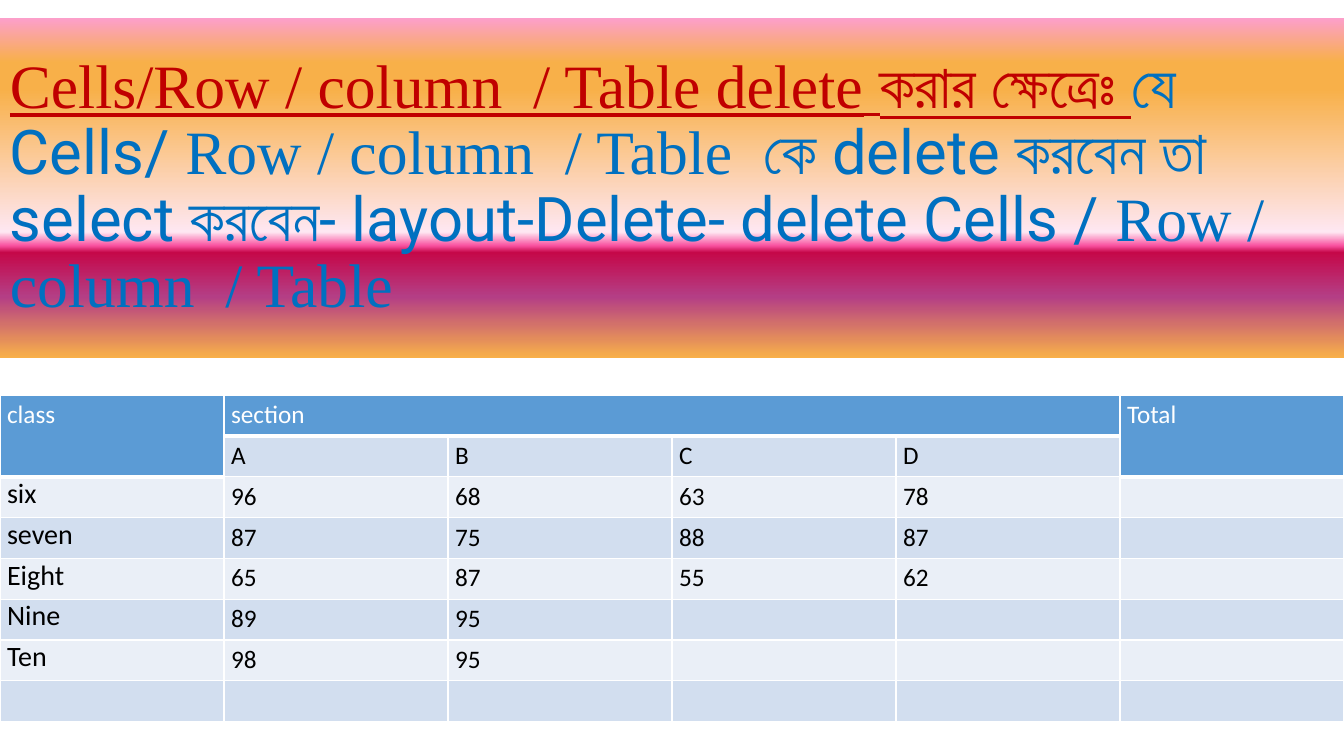
from lxml import etree
from pptx import Presentation
from pptx import util as u
from pptx.dml.color import RGBColor
from pptx.enum import shapes, text
from pptx.oxml import ns

COLORS = {
    "heading": "C00000", "body": "0070C0", "white": "FFFFFF", "black": "000000",
    "header": "5B9BD5", "band_dark": "D2DEEF", "band_light": "EAEFF7",
}
BANNER_STOPS = [
    (0, "FC9FCB"), (13, "F8B049"), (21, "F8B049"), (63, "FEE7F2"),
    (67, "F952A0"), (69, "C50849"), (82, "B43E85"), (100, "F8B049"),
]
TITLE_RUNS = [
    ("Cells/Row / column  / Table delete", "Times New Roman", "heading"),
    (" করার ক্ষেত্রেঃ ", "Roboto", "heading"),
    ("যে Cells/ ", "Roboto", "body"),
    ("Row / column  / Table  ", "Times New Roman", "body"),
    ("কে delete করবেন তা select করবেন- layout-Delete- delete Cells / ", "Roboto", "body"),
    ("Row / column  / Table", "Times New Roman", "body"),
]
TABLE_ROWS = [
    ["class", "section", "", "", "", "Total"],
    ["", "A", "B", "C", "D", ""],
    ["six", "96", "68", "63", "78", ""],
    ["seven", "87", "75", "88", "87", ""],
    ["Eight", "65", "87", "55", "62", ""],
    ["Nine", "89", "95", "", "", ""],
    ["Ten", "98", "95", "", "", ""],
    [""] * 6,
]
MERGES = [((0, 0), (1, 0)), ((0, 1), (0, 4)), ((0, 5), (1, 5))]


def rgb(name):
    return RGBColor.from_string(COLORS[name])


def style_font(font, name, size, color):
    font.name = name
    font.size = u.Pt(size)
    font.color.rgb = rgb(color)


def add_color(parent, value):
    etree.SubElement(parent, ns.qn("a:srgbClr"), val=value)


def fill_gradient(sp, stops):
    sp.fill.background()
    no_fill = sp._element.spPr.find(ns.qn("a:noFill"))
    grad = etree.Element(ns.qn("a:gradFill"), rotWithShape="1")
    stop_list = etree.SubElement(grad, ns.qn("a:gsLst"))
    for percent, value in stops:
        add_color(etree.SubElement(stop_list, ns.qn("a:gs"), pos=str(percent * 1000)), value)
    etree.SubElement(grad, ns.qn("a:lin"), ang="5400000", scaled="0")
    no_fill.getparent().replace(no_fill, grad)


def add_banner(s):
    sp = s.shapes.add_shape(shapes.MSO_SHAPE.RECTANGLE, 0, u.Inches(0.18),
                            u.Inches(13.33), u.Inches(3.37))
    sp.shadow.inherit = False
    sp.line.fill.background()
    fill_gradient(sp, BANNER_STOPS)
    tf = sp.text_frame
    tf.word_wrap = True
    tf.vertical_anchor = text.MSO_ANCHOR.MIDDLE
    p = tf.paragraphs[0]
    p.alignment = text.PP_ALIGN.LEFT
    p.line_spacing = 0.9
    for words, font_name, color in TITLE_RUNS:
        r = p.add_run()
        r.text = words
        style_font(r.font, font_name, 44, color)
        r.font.underline = color == "heading"


def set_borders(cell, bottom):
    props = cell._tc.get_or_add_tcPr()
    widths = {"a:lnL": 1, "a:lnR": 1, "a:lnT": 1, "a:lnB": bottom}
    for index, (tag, width) in enumerate(widths.items()):
        line = etree.Element(ns.qn(tag), w=str(u.Pt(width)))
        add_color(etree.SubElement(line, ns.qn("a:solidFill")), COLORS["white"])
        props.insert(index, line)


def style_cell(cell, words, row, col):
    header = row == 0 or (row == 1 and col in (0, 5))
    fill = "header" if header else "band_dark" if row % 2 else "band_light"
    class_name = col == 0 and row > 1
    cell.fill.solid()
    cell.fill.fore_color.rgb = rgb(fill)
    cell.margin_left = cell.margin_right = u.Inches(0.07)
    cell.margin_top = cell.margin_bottom = 0
    cell.text_frame.text = words
    p = cell.text_frame.paragraphs[0]
    p.line_spacing = 1.0 if class_name else 1.15
    style_font(p.font, "Calibri", 18, "black")
    for r in p.runs:
        style_font(r.font, "Calibri", 20 if class_name else 18, "white" if header else "black")
    set_borders(cell, 3 if header else 1)


def add_marks_table(s):
    rows, cols = len(TABLE_ROWS), len(TABLE_ROWS[0])
    table = s.shapes.add_table(rows, cols, 0, u.Inches(3.92),
                               u.Inches(13.33), u.Inches(3.24)).table
    for row, values in enumerate(TABLE_ROWS):
        for col, words in enumerate(values):
            style_cell(table.cell(row, col), words, row, col)
    for first, last in MERGES:
        table.cell(*first).merge(table.cell(*last))


def main():
    prs = Presentation()
    prs.slide_width = u.Inches(13.33)
    prs.slide_height = u.Inches(7.5)
    s = prs.slides.add_slide(prs.slide_layouts[6])
    add_banner(s)
    add_marks_table(s)
    prs.save("out.pptx")


if __name__ == "__main__":
    main()
